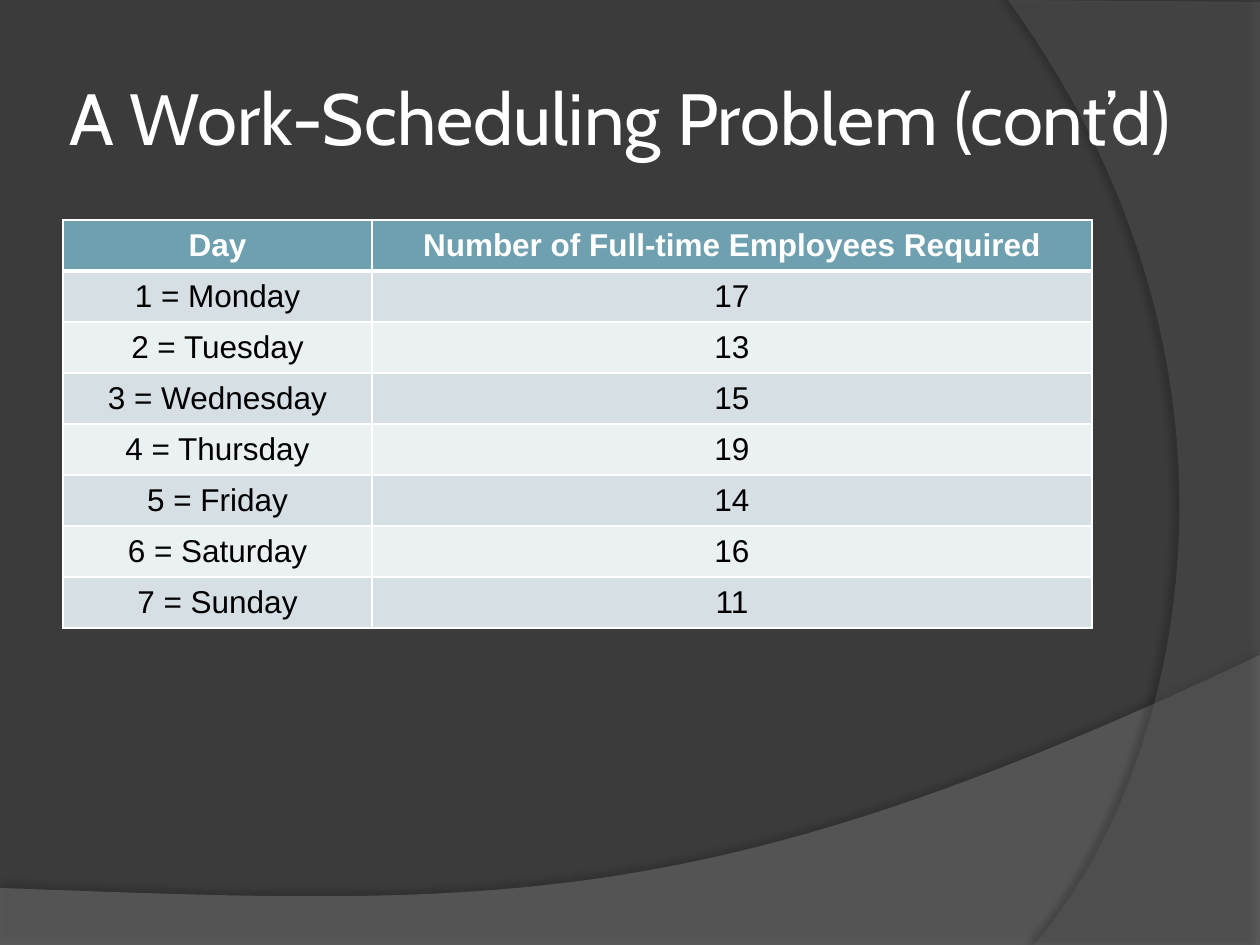
from dataclasses import dataclass

from lxml import etree
from pptx import Presentation
from pptx.dml.color import RGBColor
from pptx.enum.text import MSO_ANCHOR, MSO_AUTO_SIZE, PP_ALIGN
from pptx.oxml.ns import qn
from pptx.util import Pt

MIDDLE = MSO_ANCHOR.MIDDLE
FIXED = MSO_AUTO_SIZE.NONE
LEFT, CENTER = PP_ALIGN.LEFT, PP_ALIGN.CENTER
PX = 914400 / 126  # EMU per px
STEPS = 60         # line pieces per curve


def emu(px):
    return round(px * PX)


def rgb(code):
    return RGBColor.from_string(code)


def node(parent, tag, **attrs):
    return etree.SubElement(parent, qn(tag), {k: str(v) for k, v in attrs.items()})


def curve(*ends):
    """Points on a cubic curve through its four control points."""
    for i in range(1, STEPS + 1):
        t = i / STEPS
        mix = ((1 - t) ** 3, 3 * t * (1 - t) ** 2, 3 * t * t * (1 - t), t ** 3)
        yield tuple(sum(m * p[k] for m, p in zip(mix, ends)) for k in (0, 1))


@dataclass
class Theme:
    back: str = "3B3B3B"
    wave: str = "7F7F7F"
    arc: str = "5E5E5E"
    dark: str = "000000"
    light: str = "FFFFFF"
    head: str = "6EA0B0"
    bands: tuple = ("D5DFE4", "EBF0F2")
    title: tuple = ("Cabin", 41.4)
    body: tuple = ("Arial", 18)


class Deck:
    def __init__(self, theme):
        self.theme = theme
        self.prs = Presentation()
        self.prs.slide_width, self.prs.slide_height = emu(1260), emu(945)
        self.slide = self.prs.slides.add_slide(self.prs.slide_layouts[5])
        fill = self.slide.background.fill
        fill.solid()
        fill.fore_color.rgb = rgb(theme.back)

    def label(self, frame, text, face, color, align, bold=False):
        para = frame.paragraphs[0]
        para.alignment = align
        run = para.add_run()
        run.text = text
        style = {"name": face[0], "size": Pt(face[1]), "bold": bold}
        for key, value in style.items():
            setattr(run.font, key, value)
        run.font.color.rgb = rgb(color)

    def sweep(self, points, color, alpha, shade, dist, angle):
        """Translucent curved area with a soft edge shadow."""
        start, *rest = [(emu(x), emu(y)) for x, y in points]
        pen = self.slide.shapes.build_freeform(*start, scale=1.0)
        pen.add_line_segments(rest, close=True)
        shape = pen.convert_to_shape()
        shape.line.fill.background()
        shape.fill.solid()
        shape.fill.fore_color.rgb = rgb(color)
        props = shape._element.spPr
        node(props.find(".//" + qn("a:srgbClr")), "a:alpha", val=alpha * 1000)
        shape.shadow.inherit = False
        cast = node(props.find(qn("a:effectLst")), "a:outerShdw", blurRad=Pt(4),
                    dist=Pt(dist), dir=angle * 60000, algn="ctr", rotWithShape=0)
        tint = node(cast, "a:srgbClr", val=self.theme.dark)
        node(tint, "a:alpha", val=shade * 1000)

    def title(self, text, x, y, w, h):
        box = self.slide.shapes.title
        self.slide.shapes._spTree.append(box._element)  # in front of the sweeps
        place = {"left": x, "top": y, "width": w, "height": h}
        for key, value in place.items():
            setattr(box, key, emu(value))
        frame = box.text_frame
        form = {"word_wrap": True, "auto_size": FIXED, "vertical_anchor": MIDDLE}
        form.update({"margin_" + side: emu(6)
                     for side in ("left", "right", "top", "bottom")})
        for key, value in form.items():
            setattr(frame, key, value)
        self.label(frame, text, self.theme.title, self.theme.light, LEFT)

    def edge(self, cell, side, width):
        line = node(cell._tc.get_or_add_tcPr(), "a:ln" + side, w=Pt(width))
        node(node(line, "a:solidFill"), "a:srgbClr", val=self.theme.light)

    def table(self, rows, x, y, cols, high):
        theme = self.theme
        grid = self.slide.shapes.add_table(
            len(rows), len(cols), emu(x), emu(y),
            emu(sum(cols)), emu(high * len(rows))).table
        for col, width in zip(grid.columns, cols):
            col.width = emu(width)
        for r, row in enumerate(rows):
            grid.rows[r].height = emu(high)
            top = r == 0
            fill = theme.head if top else theme.bands[(r - 1) % 2]
            color = theme.light if top else theme.dark
            for c, text in enumerate(row):
                cell = grid.cell(r, c)
                cell.vertical_anchor = MIDDLE
                for side in "LRTB":
                    thick = (top and side == "B") or (r == 1 and side == "T")
                    self.edge(cell, side, 3 if thick else 1)
                cell.fill.solid()
                cell.fill.fore_color.rgb = rgb(fill)
                self.label(cell.text_frame, text, theme.body, color, CENTER, top)


def main():
    theme = Theme()
    deck = Deck(theme)

    # Background sweeps
    wave = [(0, 888), (0, 946), (1260, 946), (1260, 655),
            *curve((1260, 655), (704, 919), (493, 906), (0, 888))]
    arc = [(1260, 2), (1260, 945), (1034, 945),
           *curve((1034, 945), (1178, 780), (1283, 378), (1008, 0))]
    deck.sweep(wave, theme.wave, 45, 35, 3.5, 270)
    deck.sweep(arc, theme.arc, 40, 45, 4, 180)

    # Title
    deck.title("A Work-Scheduling Problem (cont’d)", 63, 38, 1133, 158)

    # Staffing table
    days = ("Monday", "Tuesday", "Wednesday", "Thursday",
            "Friday", "Saturday", "Sunday")
    staff = (17, 13, 15, 19, 14, 16, 11)
    rows = [("Day", "Number of Full-time Employees Required")]
    rows += [(f"{i} = {day}", str(need))
             for i, (day, need) in enumerate(zip(days, staff), 1)]
    deck.table(rows, 63, 220, (309, 720), 51)

    deck.prs.save("out.pptx")


if __name__ == "__main__":
    main()
